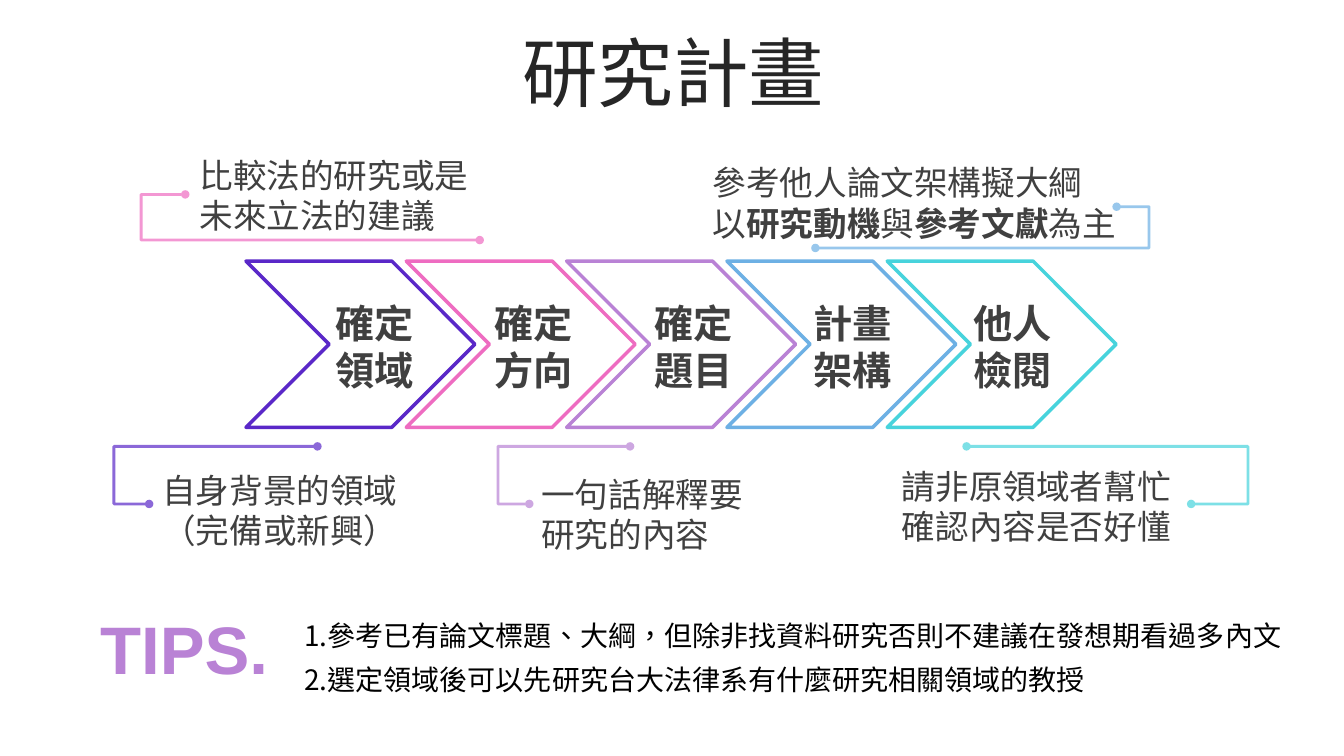
from dataclasses import dataclass

from lxml.etree import SubElement as Sub
from pptx import Presentation
from pptx.dml.color import RGBColor as Rgb
from pptx.enum.shapes import MSO_CONNECTOR as Link, MSO_SHAPE as Kind
from pptx.enum.text import MSO_ANCHOR as Anchor, PP_ALIGN as Align
from pptx.oxml.ns import qn
from pptx.util import Cm, Pt


@dataclass(frozen=True)
class Theme:
    sans: str = "Noto Sans CJK SC"
    latin: str = "Arial"
    title: str = "262626"
    body: str = "404040"
    black: str = "000000"
    violet: str = "5A28C8"
    pink: str = "EE6CC1"
    purple: str = "B982D5"
    blue: str = "6DB0E4"
    aqua: str = "47D3DC"
    head: int = 54
    tips: int = 48
    step: int = 28
    note: int = 24
    tip: int = 20


T = Theme()

# Steps of the plan: label, colour
STEPS = [
    ("確定領域", T.violet),
    ("確定方向", T.pink),
    ("確定題目", T.purple),
    ("計畫架構", T.blue),
    ("他人檢閱", T.aqua),
]

# Notes: left, top, width, text (bold parts between stars)
NOTES = [
    (4.09, 11.71, 6.55, "自身背景的領域\n（完備或新興）"),
    (5.03, 3.78, 7.19, "比較法的研究或是未來立法的建議"),
    (13.64, 11.81, 5.69, "一句話解釋要研究的內容"),
    (17.96, 3.96, 10.54, "參考他人論文架構擬大綱\n以*研究動機*與*參考文獻*為主"),
    (22.73, 11.61, 6.99, "請非原領域者幫忙確認內容是否好懂"),
]

# Brackets: start x and y, end x and y, x of the upright, colour
BRACKETS = [
    (3.76, 12.7, 8, 11.25, 2.87, T.violet),
    (13.34, 12.7, 15.88, 11.25, 12.55, T.purple),
    (30.02, 12.7, 24.36, 11.25, 31.45, T.aqua),
    (4.67, 4.9, 12.09, 6.05, 3.56, T.pink),
    (20.55, 6.25, 28.14, 5.21, 28.96, T.blue),
]

TIPS = [
    "1.參考已有論文標題、大綱，但除非找資料研究否則不建議在發想期看過多內文",
    "2.選定領域後可以先研究台大法律系有什麼研究相關領域的教授",
]


def style(run, size, color, bold, face):
    font = run.font
    font.size, font.bold, font.name = Pt(size), bold, face
    font.color.rgb = Rgb.from_string(color)
    props = run._r.get_or_add_rPr()
    props.set("lang", "zh-TW")
    Sub(props, qn("a:ea")).set("typeface", T.sans)


def add_text(slide, box, text, size, color, bold=False, face=T.sans,
             align=Align.LEFT, pad=0, wrap=True, anchor=Anchor.TOP):
    frame = slide.shapes.add_textbox(*map(Cm, box)).text_frame
    frame.word_wrap = wrap
    frame.vertical_anchor = anchor
    frame.margin_left = frame.margin_right = Cm(pad)
    for i, line in enumerate(text.split("\n")):
        para = frame.add_paragraph() if i else frame.paragraphs[0]
        para.alignment = align
        for j, part in enumerate(line.split("*")):
            run = para.add_run()
            run.text = part
            style(run, size, color, bold or j % 2 == 1, face)
    return frame


def add_arrow(group, left, color):
    arrow = group.shapes.add_shape(
        Kind.CHEVRON, Cm(left), Cm(6.58), Cm(5.77), Cm(4.19))
    arrow.shadow.inherit = False
    arrow.fill.background()
    arrow.line.color.rgb = Rgb.from_string(color)
    arrow.line.width = Pt(2.5)


def add_bracket(slide, x1, y1, x2, y2, turn, color):
    link = slide.shapes.add_connector(
        Link.ELBOW, Cm(x1), Cm(y1), Cm(x2), Cm(y2))
    link.line.color.rgb = Rgb.from_string(color)
    link.line.width = Pt(2)
    props = link._element.spPr
    # The bend lies outside the ends, as a share of their distance
    bend = round((turn - x1) / (x2 - x1) * 100000)
    guide = Sub(props.find(".//" + qn("a:avLst")), qn("a:gd"))
    guide.set("name", "adj1")
    guide.set("fmla", f"val {bend}")
    # Faded line with round ends and no shadow
    Sub(props.find(".//" + qn("a:srgbClr")), qn("a:alpha")).set("val", "70000")
    for end in ("a:headEnd", "a:tailEnd"):
        Sub(props.find(qn("a:ln")), qn(end)).set("type", "oval")
    Sub(props, qn("a:effectLst"))


def main():
    deck = Presentation()
    deck.slide_width, deck.slide_height = Cm(33.87), Cm(19.05)
    slide = deck.slides.add_slide(deck.slide_layouts[6])

    # Title
    frame = add_text(slide, (0.89, 0.94, 32.16, 2.01), "研究計畫", T.head,
                     T.title, align=Align.CENTER, pad=0.25,
                     anchor=Anchor.MIDDLE)
    frame.paragraphs[0].line_spacing = 0.9
    frame.paragraphs[0].space_before = Pt(10)

    # Row of steps
    group = slide.shapes.add_group_shape()
    for i, (label, color) in enumerate(STEPS):
        add_arrow(group, 6.2 + 4.04 * i, color)
        add_text(slide, (8.23 + 4.02 * i, 7.42, 2.41, 2.64), label, T.step,
                 T.body, True, T.latin, Align.CENTER)

    # Notes and their brackets
    for bracket in BRACKETS:
        add_bracket(slide, *bracket)
    for left, top, width, text in NOTES:
        add_text(slide, (left, top, width, 2.31), text, T.note, T.body)

    # Tips
    add_text(slide, (1.5, 15.16, 5.51, 2.31), "TIPS.", T.tips, T.purple, True,
             T.latin, Align.RIGHT, 0.25, anchor=Anchor.MIDDLE)
    for i, tip in enumerate(TIPS):
        add_text(slide, (7.42, 15.47 + 1.09 * i, 25.32 - 4.29 * i, 1.12), tip,
                 T.tip, T.black, pad=0.25, wrap=False)

    deck.save("out.pptx")


if __name__ == "__main__":
    main()
